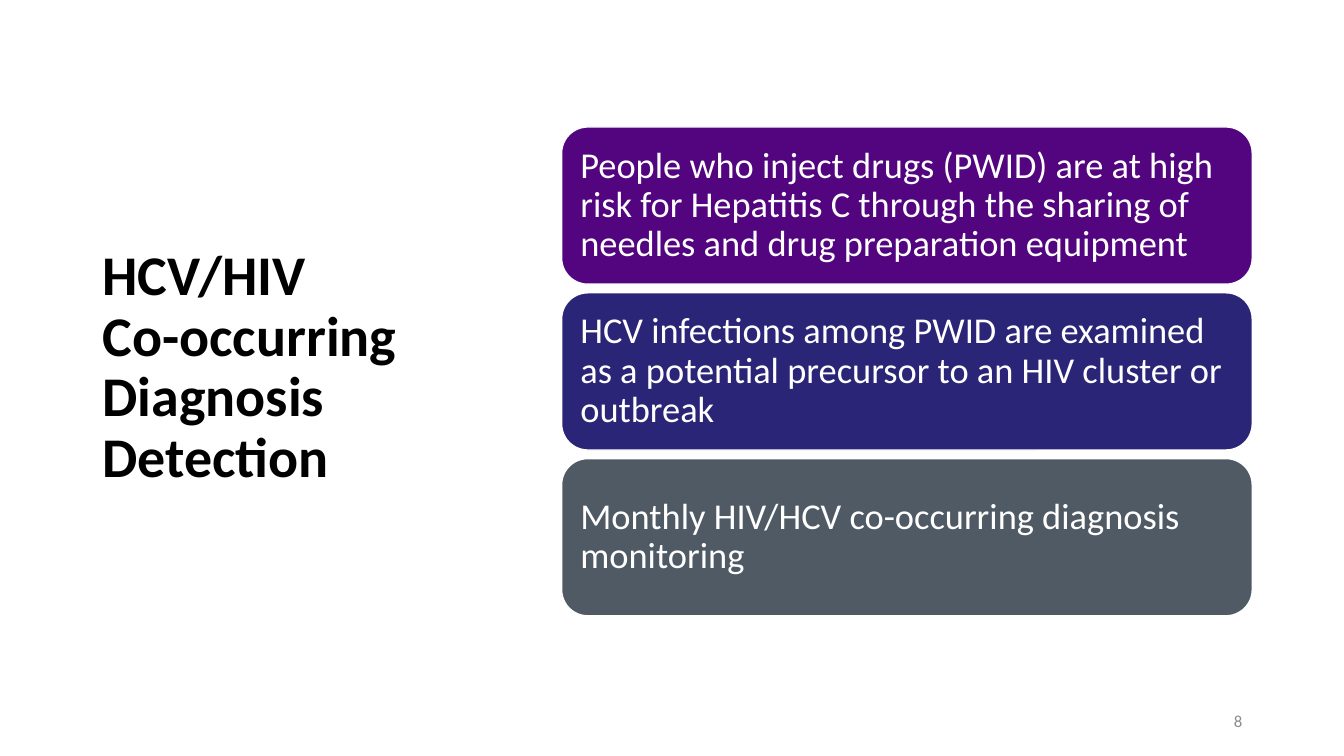
"""Build the HCV/HIV co-occurring diagnosis detection slide."""
from pptx import Presentation
from pptx.dml.color import RGBColor
from pptx.enum.shapes import MSO_SHAPE
from pptx.enum.text import MSO_ANCHOR, PP_ALIGN
from pptx.util import Inches, Pt

ROUNDED = MSO_SHAPE.ROUNDED_RECTANGLE
MIDDLE = MSO_ANCHOR.MIDDLE
LEFT, RIGHT = PP_ALIGN.LEFT, PP_ALIGN.RIGHT

FONT = "Calibri"
COLORS = {
    "black": "000000",
    "white": "FFFFFF",
    "gray": "8C8C8C",
    "purple": "52057F",
    "indigo": "2B2577",
    "slate": "4F5A65",
}
TITLE = "HCV/HIV \vCo-occurring Diagnosis Detection"
PAGE_NUMBER = "8"
CARDS = [
    ("People who inject drugs (PWID) are at high risk for Hepatitis C through "
     "the sharing of needles and drug preparation equipment", "purple"),
    ("HCV infections among PWID are examined as a potential precursor to an "
     "HIV cluster or outbreak", "indigo"),
    ("Monthly HIV/HCV co-occurring diagnosis monitoring", "slate"),
]
CARD_LEFT, CARD_TOP, CARD_WIDTH, CARD_HEIGHT = 5.57, 1.26, 6.85, 1.56
CARD_PITCH = 1.645
CARD_MARGIN = 0.11


def color(name):
    return RGBColor.from_string(COLORS[name])


def write(shape, text, size, color_name, bold=False, align=LEFT, spacing=0.9):
    frame = shape.text_frame
    frame.word_wrap = True
    frame.vertical_anchor = MIDDLE
    frame.text = text
    para = frame.paragraphs[0]
    para.alignment = align
    para.line_spacing = spacing
    for span in para.runs:
        span.font.name = FONT
        span.font.size = Pt(size)
        span.font.bold = bold
        span.font.color.rgb = color(color_name)


def add_text(page, box, *args, **options):
    shape = page.shapes.add_textbox(*map(Inches, box))
    write(shape, *args, **options)


def add_card(page, index, text, fill):
    top = CARD_TOP + index * CARD_PITCH
    card = page.shapes.add_shape(
        ROUNDED, *map(Inches, (CARD_LEFT, top, CARD_WIDTH, CARD_HEIGHT)))
    card.shadow.inherit = False
    card.fill.solid()
    card.fill.fore_color.rgb = color(fill)
    card.line.color.rgb = color("white")
    card.line.width = Pt(1)
    write(card, text, 26, "white")
    frame = card.text_frame
    frame.margin_left = frame.margin_right = Inches(CARD_MARGIN)
    frame.margin_top = frame.margin_bottom = Inches(CARD_MARGIN)


def main():
    deck = Presentation()
    deck.slide_width, deck.slide_height = Inches(13.33), Inches(7.5)
    page = deck.slides.add_slide(deck.slide_layouts[6])
    add_text(page, (0.92, 0.61, 3.69, 6.09), TITLE, 40, "black", bold=True)
    add_text(page, (9.42, 6.95, 3, 0.4), PAGE_NUMBER, 12, "gray",
             align=RIGHT, spacing=1.0)
    for index, (text, fill) in enumerate(CARDS):
        add_card(page, index, text, fill)
    deck.save("out.pptx")


if __name__ == "__main__":
    main()
